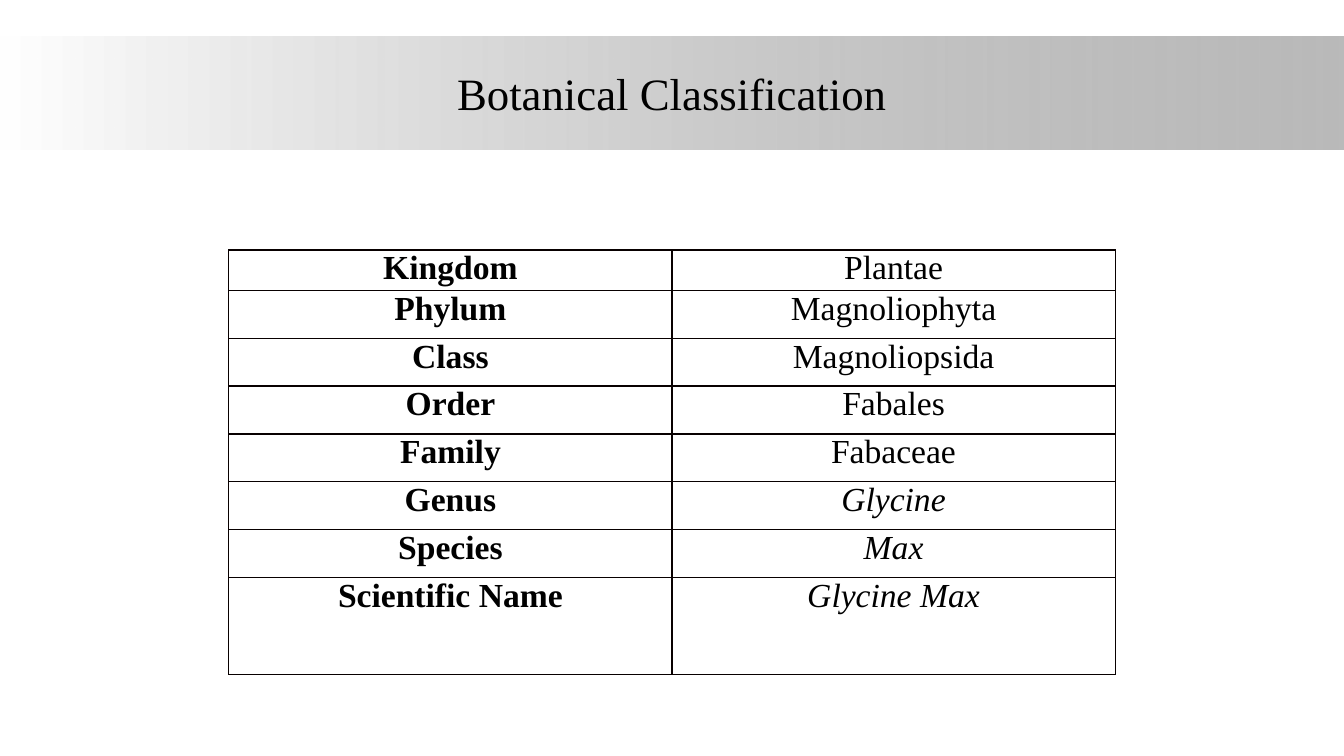
from lxml.etree import SubElement
from pptx import Presentation
from pptx.dml.color import RGBColor
from pptx.enum.shapes import MSO_SHAPE as Shape
from pptx.enum.text import MSO_ANCHOR as Anchor, PP_ALIGN as Align
from pptx.oxml.ns import qn
from pptx.util import Inches, Pt

WIDTH, HEIGHT = 13.33, 7.5
FONT = "Times New Roman"
BLACK, WHITE, GREY, BORDER = "000000", "FFFFFF", "808080", "080000"
GREY_OPACITY = 54

RANKS = [
    ("Kingdom", "Plantae"),
    ("Phylum", "Magnoliophyta"),
    ("Class", "Magnoliopsida"),
    ("Order", "Fabales"),
    ("Family", "Fabaceae"),
    ("Genus", "Glycine"),
    ("Species", "Max"),
    ("Scientific Name", "Glycine Max"),
]
LATIN_RANKS = {"Genus", "Species", "Scientific Name"}
FIRST_ROW, LAST_ROW = 0.37, 0.96


def color(hex_value):
    return RGBColor.from_string(hex_value)


def write(frame, text, size, bold=False, italic=False):
    frame.text = text
    paragraph = frame.paragraphs[0]
    paragraph.alignment = Align.CENTER
    font = paragraph.runs[0].font
    font.name, font.size = FONT, Pt(size)
    font.bold, font.italic = bold, italic
    font.color.rgb = color(BLACK)


def add_title_band(slide, left, top, width, height):
    """Draw the fading band with the title centred in it."""
    box = [Inches(length) for length in (left, top, width, height)]
    band = slide.shapes.add_shape(Shape.RECTANGLE, *box)
    band.shadow.inherit = False
    band.line.fill.background()
    band.fill.gradient()
    band.fill.gradient_angle = 0
    for stop, position, tone in zip(band.fill.gradient_stops, (0, 1), (WHITE, GREY)):
        stop.position = position
        stop.color.rgb = color(tone)
    grey = band.fill._fill._gradFill.findall(".//" + qn("a:srgbClr"))[-1]
    SubElement(grey, qn("a:alpha"), val=str(GREY_OPACITY * 1000))

    title = slide.shapes.add_textbox(*box).text_frame
    title.word_wrap = True
    title.vertical_anchor = Anchor.MIDDLE
    write(title, "Botanical Classification", 32)


def add_borders(cell):
    properties = cell._tc.get_or_add_tcPr()
    for side in ("a:lnL", "a:lnR", "a:lnT", "a:lnB"):
        line = SubElement(properties, qn(side), w=str(Pt(1)))
        fill = SubElement(line, qn("a:solidFill"))
        SubElement(fill, qn("a:srgbClr"), val=BORDER)


def fill_cell(cell, text, bold, italic):
    cell.margin_left = cell.margin_right = Inches(0.07)
    cell.margin_top = cell.margin_bottom = 0
    cell.vertical_anchor = Anchor.TOP
    add_borders(cell)
    cell.fill.background()
    write(cell.text_frame, text, 24, bold, italic)


def add_classification(slide, left, top, width, height):
    """Draw the table of ranks; the rows between first and last are equal."""
    box = [Inches(length) for length in (left, top, width, height)]
    table = slide.shapes.add_table(len(RANKS), 2, *box).table
    table.first_row = table.horz_banding = False
    middle_count = len(RANKS) - 2
    middle_row = (height - FIRST_ROW - LAST_ROW) / middle_count
    heights = [FIRST_ROW] + [middle_row] * middle_count + [LAST_ROW]
    for row, row_height, (rank, name) in zip(table.rows, heights, RANKS):
        row.height = Inches(row_height)
        fill_cell(row.cells[0], rank, bold=True, italic=False)
        fill_cell(row.cells[1], name, bold=False, italic=rank in LATIN_RANKS)


def main():
    deck = Presentation()
    deck.slide_width, deck.slide_height = Inches(WIDTH), Inches(HEIGHT)
    slide = deck.slides.add_slide(deck.slide_layouts[6])
    add_title_band(slide, 0, 0.36, WIDTH, 1.12)
    table_width = 8.79
    add_classification(slide, (WIDTH - table_width) / 2, 2.48, table_width, 4.18)
    deck.save("out.pptx")


if __name__ == "__main__":
    main()
